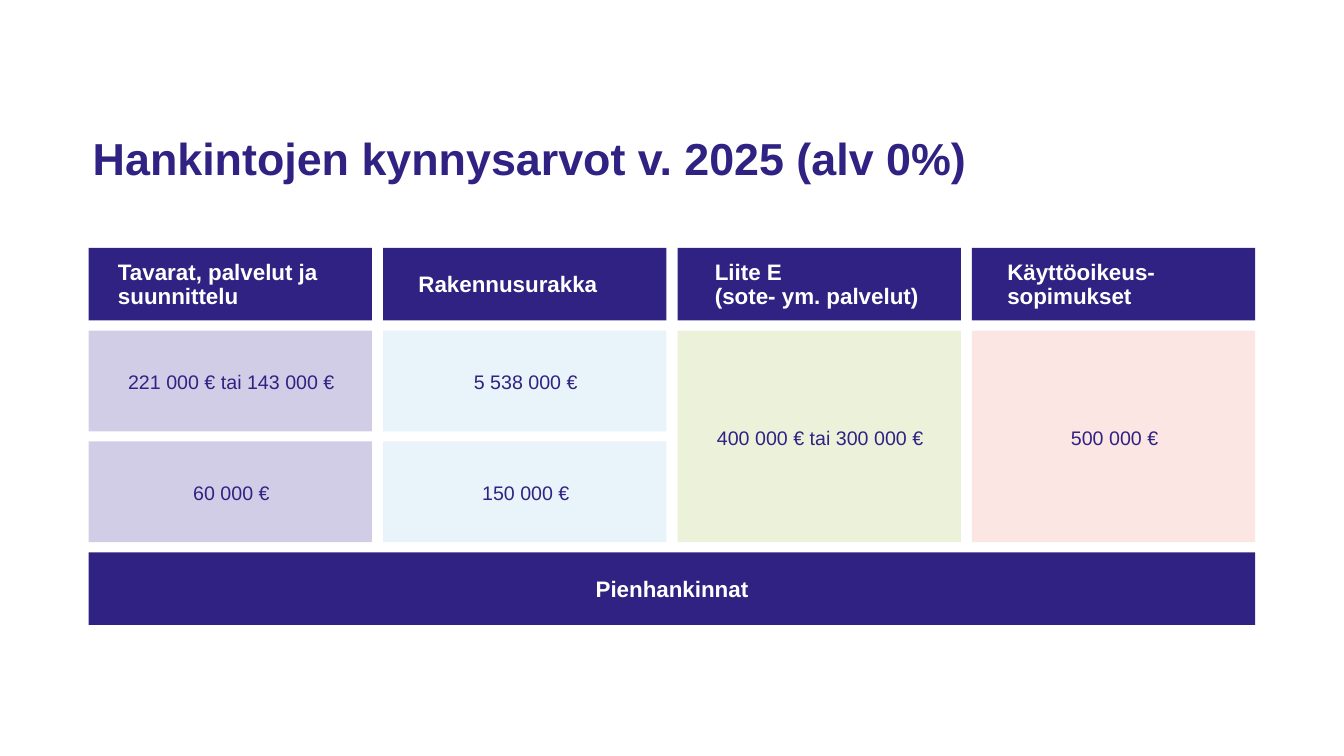
from pptx import Presentation
from pptx.dml.color import RGBColor
from pptx.enum.shapes import MSO_SHAPE
from pptx.enum.text import MSO_ANCHOR, PP_ALIGN
from pptx.util import Pt

TITLE = "Hankintojen kynnysarvot v. 2025 (alv 0%)"
FOOTER = "Pienhankinnat"
COLUMNS = [
    {"head": "Tavarat, palvelut ja suunnittelu", "inset": 29, "fill": "lilac",
     "sums": ["221 000 € tai 143 000 €", "60 000 €"]},
    {"head": "Rakennusurakka", "inset": 35, "fill": "sky",
     "sums": ["5 538 000 €", "150 000 €"]},
    {"head": "Liite E\v(sote- ym. palvelut)", "inset": 37, "fill": "lime",
     "sums": ["400 000 € tai 300 000 €"]},
    {"head": "Käyttöoikeus-sopimukset", "inset": 35, "fill": "rose",
     "sums": ["500 000 €"]},
]
COLORS = {"navy": "302283", "white": "FFFFFF", "lilac": "D2CDE7",
          "sky": "E9F3FA", "lime": "ECF2DA", "rose": "FCE6E3"}
STYLES = {
    "title": {"size": 32, "bold": True, "color": "navy", "space": 0.9,
              "anchor": MSO_ANCHOR.BOTTOM, "align": PP_ALIGN.LEFT},
    "head": {"size": 16, "bold": True, "color": "white", "space": Pt(17),
             "anchor": MSO_ANCHOR.MIDDLE, "align": PP_ALIGN.LEFT},
    "foot": {"size": 16, "bold": True, "color": "white", "space": Pt(17),
             "anchor": MSO_ANCHOR.MIDDLE, "align": PP_ALIGN.CENTER},
    "sum": {"size": 14, "bold": False, "color": "navy", "space": 1.1,
            "anchor": MSO_ANCHOR.MIDDLE, "align": PP_ALIGN.CENTER},
}

PX = 9144
LEFT, WIDTH, STEP = 88, 281, 292
HEAD_TOP, BAR = 246, 72
BODY_TOP, BODY, GAP = 328, 210, 10
FOOT_TOP = BODY_TOP + BODY + GAP
TEXT_W, TEXT_H, PAD = 225, 46, 29


def scale(*box):
    return [n * PX for n in box]


def rgb(name):
    return RGBColor.from_string(COLORS[name])


def set_all(item, values):
    for key, value in values.items():
        setattr(item, key, value)


def add_block(slide, box, color):
    block = slide.shapes.add_shape(MSO_SHAPE.RECTANGLE, *scale(*box))
    block.shadow.inherit = False
    block.fill.solid()
    block.fill.fore_color.rgb = rgb(color)
    block.line.fill.background()


def add_text(slide, box, text, kind):
    style = STYLES[kind]
    frame = slide.shapes.add_textbox(*scale(*box)).text_frame
    set_all(frame, {"word_wrap": True, "vertical_anchor": style["anchor"],
                    "margin_left": 0, "margin_right": 0,
                    "margin_top": 0, "margin_bottom": 0})
    para = frame.paragraphs[0]
    para.text = text
    set_all(para, {"alignment": style["align"], "line_spacing": style["space"]})
    for run in para.runs:
        set_all(run.font, {"name": "Arial", "size": Pt(style["size"]),
                           "bold": style["bold"]})
        run.font.color.rgb = rgb(style["color"])


def add_column(slide, left, column):
    add_block(slide, (left, HEAD_TOP, WIDTH, BAR), "navy")
    add_text(slide, (left + column["inset"], HEAD_TOP + 14, TEXT_W, TEXT_H),
             column["head"], "head")
    count = len(column["sums"])
    height = (BODY - GAP * (count - 1)) // count
    for row, text in enumerate(column["sums"]):
        top = BODY_TOP + row * (height + GAP)
        add_block(slide, (left, top, WIDTH, height), column["fill"])
        add_text(slide, (left + PAD, top, TEXT_W, height), text, "sum")


def main():
    deck = Presentation()
    deck.slide_width, deck.slide_height = scale(1333, 750)
    slide = deck.slides.add_slide(deck.slide_layouts[6])
    add_text(slide, (92, 102, 960, 82), TITLE, "title")
    for index, column in enumerate(COLUMNS):
        add_column(slide, LEFT + index * STEP, column)
    total = STEP * (len(COLUMNS) - 1) + WIDTH
    add_block(slide, (LEFT, FOOT_TOP, total, BAR), "navy")
    add_text(slide, (554, FOOT_TOP + 14, TEXT_W, TEXT_H), FOOTER, "foot")
    deck.save("out.pptx")


if __name__ == "__main__":
    main()
